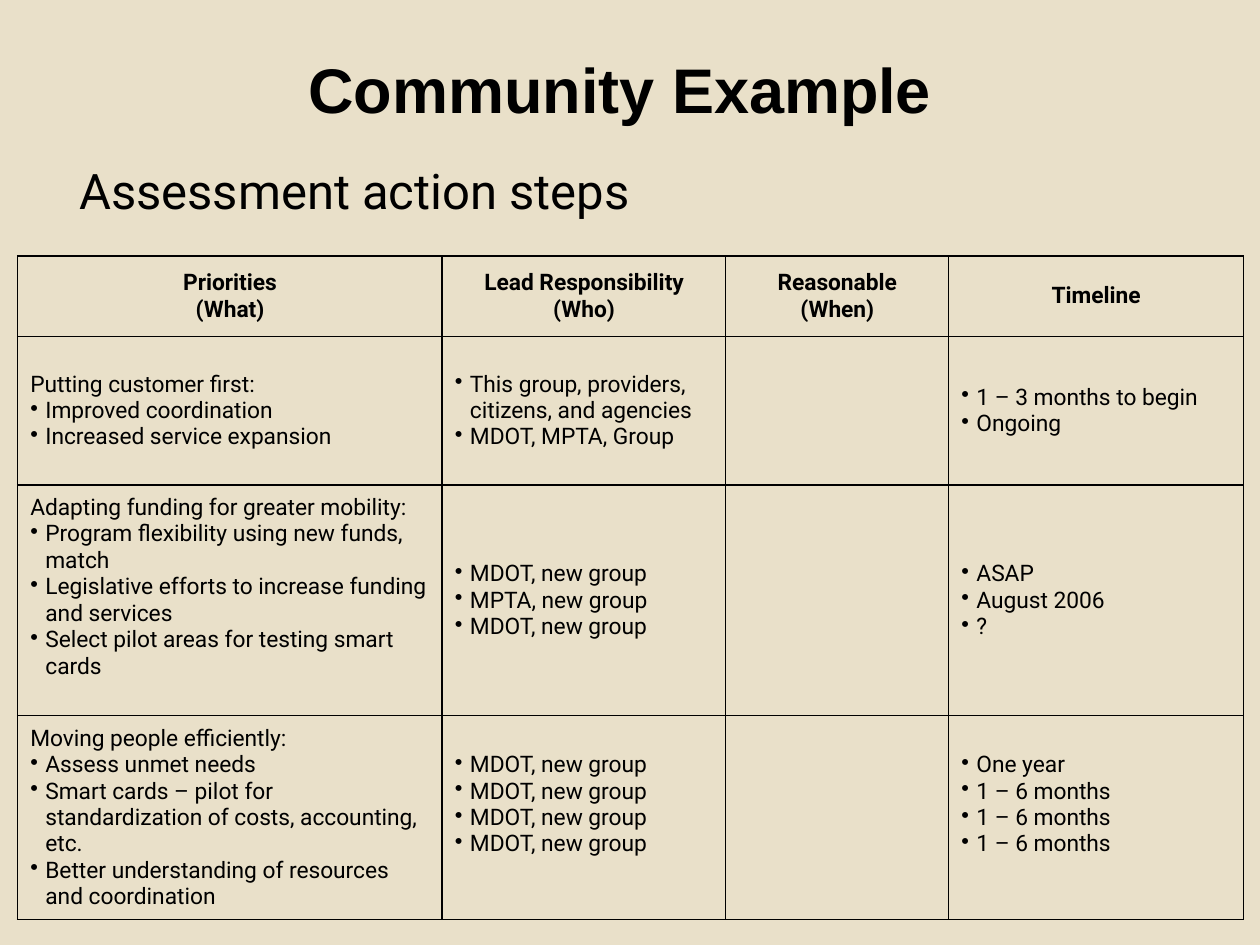
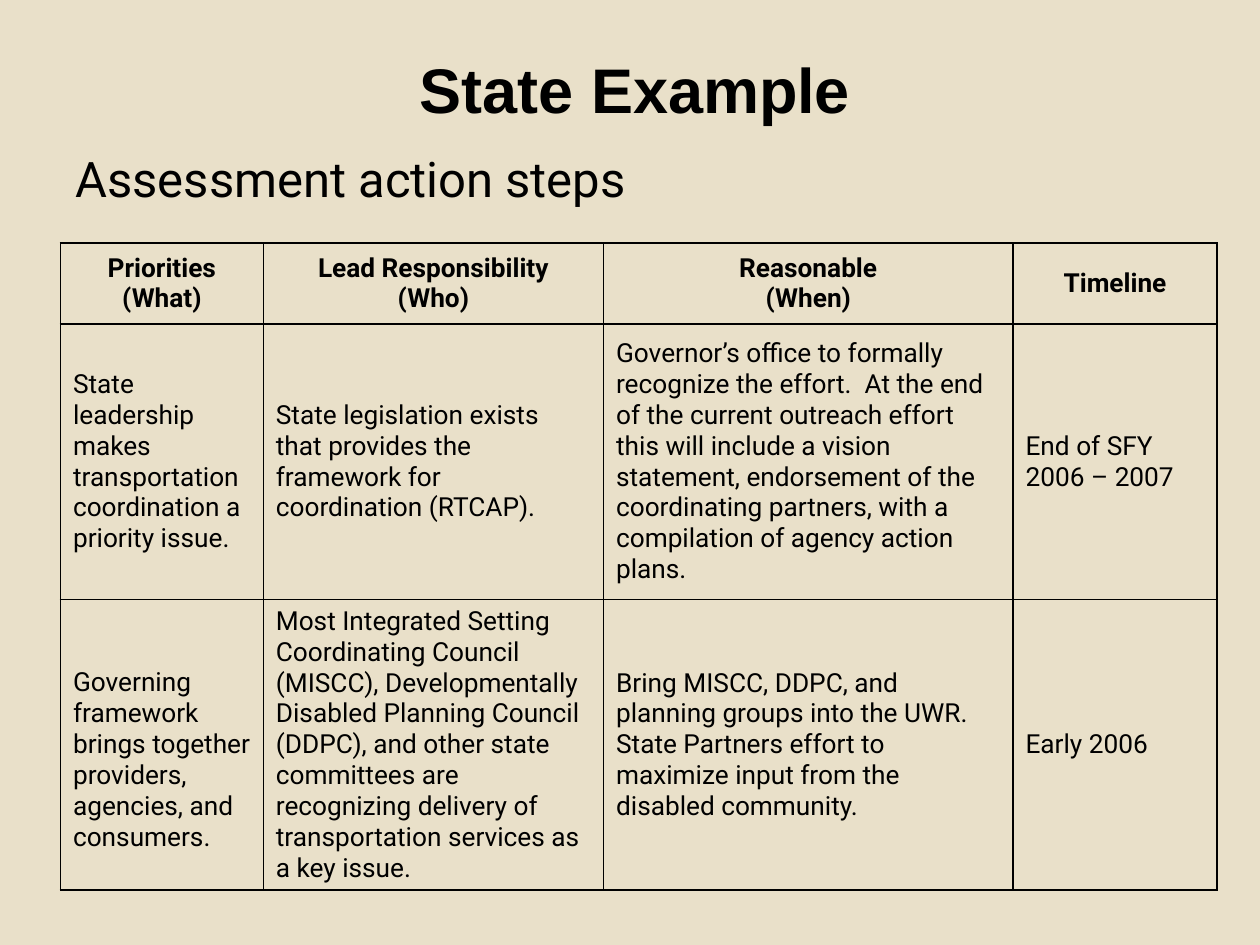
from lxml import etree
from pptx import Presentation
from pptx.dml.color import RGBColor
from pptx.enum import text as t
from pptx.oxml import ns
from pptx.util import Inches, Pt

PAPER, INK = "E9E0C9", "000000"
HEAD_FONT, BODY_FONT = "Arial", "Roboto"
BULLET = "•"
INDENT = 0.12
INSET = 0.05

STEPS = "Assessment action steps"
HEADS = ["Priorities\n(What)", "Lead Responsibility\n(Who)",
         "Reasonable\n(When)", "Timeline"]

# A line that starts with the bullet sign becomes a bulleted paragraph.
# "pads" holds the extra top and bottom inset of a cell, by (row, column).
SLIDES = [
    {
        "title": "Community Example", "title_at": (2.09, 0.3, 5.66, 0.9),
        "steps_at": (0.53, 1.22, 5.46, 0.57),
        "table_at": (0.14, 2.03), "size": 13,
        "cols": [3.37, 2.25, 1.77, 2.34], "rows": [0.64, 1.18, 1.83, 1.62],
        "pads": {(2, 0): (0, 0.21), (3, 1): (0, 0.21), (3, 3): (0, 0.21)},
        "body": [
            ["Putting customer first:\n•Improved coordination\n"
             "•Increased service expansion",
             "•This group, providers, citizens, and agencies\n"
             "•MDOT, MPTA, Group",
             "",
             "•1 – 3 months to begin\n•Ongoing"],
            ["Adapting funding for greater mobility:\n"
             "•Program flexibility using new funds, match\n"
             "•Legislative efforts to increase funding and services\n"
             "•Select pilot areas for testing smart cards",
             "•MDOT, new group\n•MPTA, new group\n•MDOT, new group",
             "",
             "•ASAP\n•August 2006\n•?"],
            ["Moving people efficiently:\n•Assess unmet needs\n"
             "•Smart cards – pilot for standardization of costs, "
             "accounting, etc.\n"
             "•Better understanding of resources and coordination",
             "\n".join(["•MDOT, new group"] * 4),
             "",
             "\n".join(["•One year"] + ["•1 – 6 months"] * 3)],
        ],
    },
    {
        "title": "State Example", "title_at": (2.66, 0.3, 4.76, 0.9),
        "steps_at": (0.5, 1.13, 9, 0.57),
        "table_at": (0.48, 1.93), "size": 15,
        "cols": [1.61, 2.7, 3.25, 1.62], "rows": [0.64, 2.19, 2.3],
        "pads": {(2, 0): (0.24, 0)},
        "body": [
            ["State leadership makes transportation coordination "
             "a priority issue.",
             "State legislation exists that provides the framework for "
             "coordination (RTCAP).",
             "Governor’s office to formally recognize the effort.  At the end "
             "of the current outreach effort this will include a vision "
             "statement, endorsement of the coordinating partners, with a "
             "compilation of agency action plans.",
             "End of SFY 2006 – 2007"],
            ["Governing framework brings together providers, agencies, "
             "and consumers.",
             "Most Integrated Setting Coordinating Council (MISCC), "
             "Developmentally Disabled Planning Council (DDPC), and other "
             "state committees are recognizing delivery of transportation "
             "services as a key issue.",
             "Bring MISCC, DDPC, and planning groups into the UWR.  State "
             "Partners effort to maximize input from the disabled community.",
             "Early 2006"],
        ],
    },
]


def color(code):
    return RGBColor.from_string(code)


def add_xml(parent, tag, **attrs):
    return etree.SubElement(parent, ns.qn(tag), attrs)


def style(para, face, size, bold=False, align=t.PP_ALIGN.LEFT):
    para.alignment = align
    para.space_before = Pt(0)
    font = para.font
    font.name, font.size, font.bold = face, Pt(size), bold
    font.color.rgb = color(INK)


def set_mark(para, mark=None, indent=0):
    """Give a paragraph a bullet with a hanging indent, or none at all."""
    props = para._p.get_or_add_pPr()
    props.set("marL", str(Inches(indent)))
    props.set("indent", str(-Inches(indent)))
    if mark:
        add_xml(props, "a:buChar", char=mark)
    else:
        add_xml(props, "a:buNone")


def fill_holder(shape, words, at, face, size, **look):
    shape.left, shape.top, shape.width, shape.height = map(Inches, at)
    frame = shape.text_frame
    frame.text = words
    frame.word_wrap = True
    frame.auto_size = t.MSO_AUTO_SIZE.NONE
    frame.vertical_anchor = t.MSO_ANCHOR.TOP
    para = frame.paragraphs[0]
    set_mark(para)
    style(para, face, size, **look)
    return frame


def add_edges(cell):
    props = cell._tc.get_or_add_tcPr()
    for side in "LRTB":
        line = add_xml(props, f"a:ln{side}", w=str(Pt(1)))
        add_xml(add_xml(line, "a:solidFill"), "a:srgbClr", val=INK)


def fill_cell(cell, words, size, head, pad):
    add_edges(cell)
    cell.fill.background()
    cell.vertical_anchor = t.MSO_ANCHOR.MIDDLE
    cell.margin_top, cell.margin_bottom = (Inches(INSET + p) for p in pad)
    lines = words.split("\n")
    cell.text = "\n".join(line.lstrip(BULLET) for line in lines)
    align = t.PP_ALIGN.CENTER if head else t.PP_ALIGN.LEFT
    for para, line in zip(cell.text_frame.paragraphs, lines):
        if line.startswith(BULLET):
            set_mark(para, BULLET, INDENT)
        style(para, BODY_FONT, size, head, align)


def add_grid(slide, data):
    rows, cols = data["rows"], data["cols"]
    box = (*data["table_at"], sum(cols), sum(rows))
    table = slide.shapes.add_table(len(rows), len(cols),
                                   *map(Inches, box)).table
    table.first_row = table.horz_banding = False
    for col, width in zip(table.columns, cols):
        col.width = Inches(width)
    for row, height in zip(table.rows, rows):
        row.height = Inches(height)
    for r, line in enumerate([HEADS] + data["body"]):
        for c, words in enumerate(line):
            fill_cell(table.cell(r, c), words, data["size"], r == 0,
                      data["pads"].get((r, c), (0, 0)))


def main():
    prs = Presentation()
    prs.slide_width, prs.slide_height = Inches(10), Inches(7.5)
    back = prs.slide_master.background.fill
    back.solid()
    back.fore_color.rgb = color(PAPER)
    for data in SLIDES:
        slide = prs.slides.add_slide(prs.slide_layouts[1])
        title, steps = slide.placeholders
        frame = fill_holder(title, data["title"], data["title_at"], HEAD_FONT,
                            36, bold=True, align=t.PP_ALIGN.CENTER)
        frame.margin_top = Inches(0.1)
        fill_holder(steps, STEPS, data["steps_at"], BODY_FONT, 28)
        add_grid(slide, data)
    prs.save("out.pptx")


if __name__ == "__main__":
    main()
